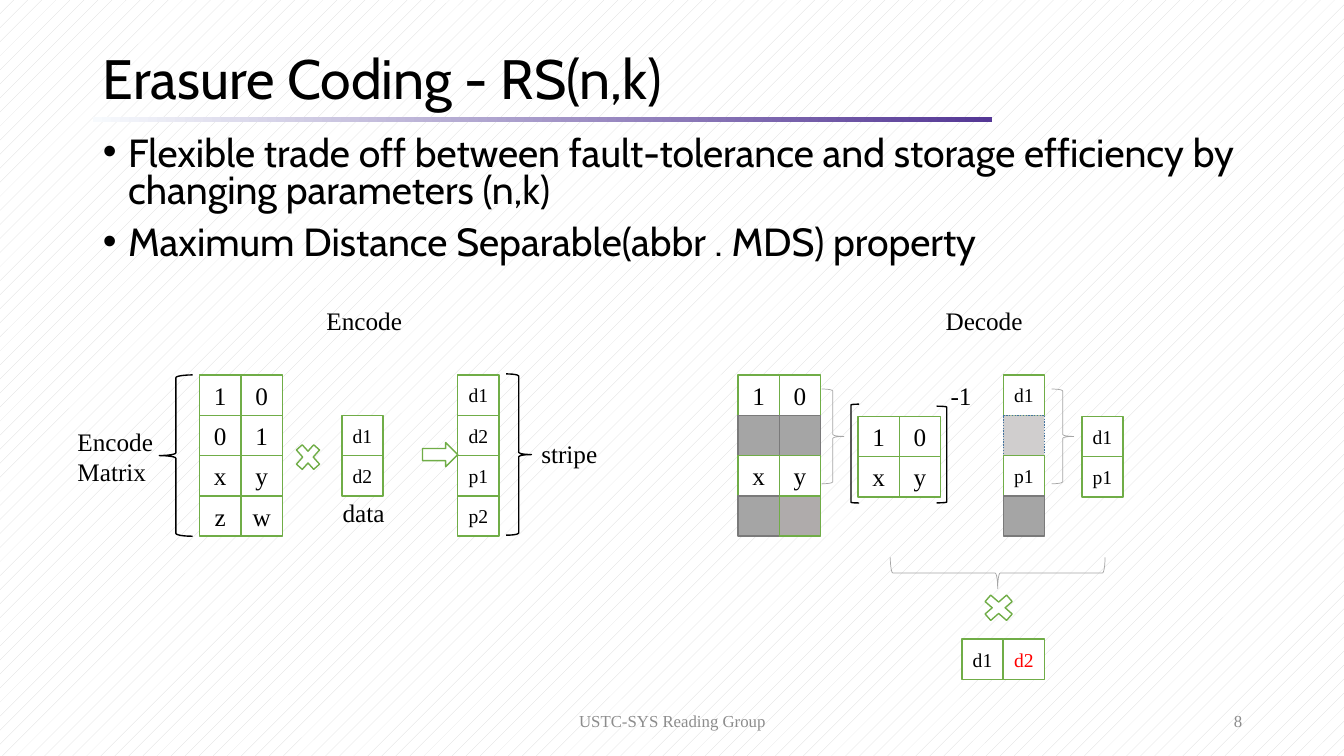
from pptx import Presentation
from pptx.dml.color import RGBColor
from pptx.enum.dml import MSO_LINE, MSO_PATTERN
from pptx.enum.shapes import MSO_SHAPE
from pptx.enum.text import MSO_ANCHOR, MSO_AUTO_SIZE, PP_ALIGN
from pptx.util import Inches, Pt

BLACK = RGBColor(0x00, 0x00, 0x00)
WHITE = RGBColor(0xFF, 0xFF, 0xFF)
RED = RGBColor(0xFF, 0x00, 0x00)
GREEN = RGBColor(0x70, 0xAD, 0x47)
BLUE = RGBColor(0x43, 0x73, 0x9E)
LOST_FILL = RGBColor(0xA5, 0xA5, 0xA5)
LOST_LINE = RGBColor(0x7A, 0x7A, 0x7A)
WARM_GRAY = RGBColor(0xAF, 0xAB, 0xAB)
PALE_GRAY = RGBColor(0xD0, 0xCE, 0xCE)
BRACE_GRAY = RGBColor(0xA6, 0xA6, 0xA6)
FOOTER_GRAY = RGBColor(0x8C, 0x8C, 0x8C)
STRIPE_GRAY = RGBColor(0xD9, 0xD9, 0xD9)
RULE_LIGHT = RGBColor(0xF7, 0xFA, 0xFD)
RULE_DARK = RGBColor(0x54, 0x37, 0x95)

HEADING_FONT = "Cabin"
DIAGRAM_FONT = "Times New Roman"
CELL_WIDTH, CELL_HEIGHT = 0.41, 0.4


def add_outline(kind, left, top, width, height, line=GREEN, weight=1, fill=None):
    shape = page.shapes.add_shape(
        kind, Inches(left), Inches(top), Inches(width), Inches(height))
    shape.shadow.inherit = False
    if fill is None:
        shape.fill.background()
    else:
        shape.fill.solid()
        shape.fill.fore_color.rgb = fill
    shape.line.color.rgb = line
    shape.line.width = Pt(weight)
    return shape


def add_label(text, left, top, width, height, size=18, color=BLACK,
              align=PP_ALIGN.LEFT, anchor=MSO_ANCHOR.TOP):
    box = page.shapes.add_textbox(
        Inches(left), Inches(top), Inches(width), Inches(height))
    frame = box.text_frame
    frame.word_wrap = True
    frame.vertical_anchor = anchor
    frame.text = text
    paragraph = frame.paragraphs[0]
    paragraph.alignment = align
    paragraph.font.name = DIAGRAM_FONT
    paragraph.font.size = Pt(size)
    paragraph.font.color.rgb = color


deck = Presentation()
deck.slide_width, deck.slide_height = Inches(13.33), Inches(7.5)
page = deck.slides.add_slide(deck.slide_layouts[1])

background = page.background.fill
background.patterned()
background.pattern = MSO_PATTERN.PERCENT_5
background.fore_color.rgb = STRIPE_GRAY
background.back_color.rgb = WHITE

# Title, rule and bullets
rule = add_outline(MSO_SHAPE.RECTANGLE, 0.92, 1.16, 8.92, 0.05)
rule.line.fill.background()
rule.fill.gradient()
rule.fill.gradient_angle = 0
for stop, color in zip(rule.fill.gradient_stops, (RULE_LIGHT, RULE_DARK)):
    stop.color.rgb = color

title, body = page.placeholders
title.text_frame.text = "Erasure Coding - RS(n,k)"
body.text_frame.text = (
    "Flexible trade off between fault-tolerance and storage efficiency "
    "by changing parameters (n,k)\n"
    "Maximum Distance Separable(abbr . MDS) property")
for holder, top, height, size, spacing, anchor in (
        (title, 0.43, 0.75, 39.6, 0.9, MSO_ANCHOR.MIDDLE),
        (body, 1.31, 5.43, 28, 0.8, MSO_ANCHOR.TOP)):
    holder.left, holder.top = Inches(0.92), Inches(top)
    holder.width, holder.height = Inches(11.5), Inches(height)
    holder.text_frame.auto_size = MSO_AUTO_SIZE.NONE
    holder.text_frame.vertical_anchor = anchor
    for number, paragraph in enumerate(holder.text_frame.paragraphs):
        paragraph.alignment = PP_ALIGN.LEFT
        paragraph.line_spacing = spacing
        paragraph.space_before = Pt(10 if number else 0)
        paragraph.font.name = HEADING_FONT
        paragraph.font.size = Pt(size)
        paragraph.font.color.rgb = BLACK
for paragraph in body.text_frame.paragraphs:
    properties = paragraph._p.get_or_add_pPr()
    properties.set("marL", str(Inches(0.25)))
    properties.set("indent", str(Inches(-0.25)))

# Matrices and vectors: left, top and rows; an empty entry is a lost block
grids = {
    "encode matrix": (1.98, 3.72, ["1 0", "0 1", "x y", "z w"]),
    "data": (3.39, 4.12, ["d1", "d2"]),
    "stripe": (4.54, 3.72, ["d1", "d2", "p1", "p2"]),
    "damaged matrix": (7.32, 3.72, ["1 0", " ", "x y", " "]),
    "damaged stripe": (9.95, 3.72, ["d1", "", "p1", ""]),
    "inverse": (8.51, 4.13, ["1 0", "x y"]),
    "survivors": (10.73, 4.13, ["d1", "p1"]),
    "recovered": (9.54, 6.34, ["d1 d2"]),
}
cells = {}
for name, (left, top, rows) in grids.items():
    for row, entries in enumerate(rows):
        for column, entry in enumerate(entries.split(" ")):
            cell = add_outline(
                MSO_SHAPE.RECTANGLE,
                left + column * CELL_WIDTH, top + row * CELL_HEIGHT,
                CELL_WIDTH, CELL_HEIGHT,
                line=GREEN if entry else LOST_LINE,
                fill=WHITE if entry else LOST_FILL)
            cells[name, row, column] = cell
            if entry:
                frame = cell.text_frame
                frame.margin_left = frame.margin_right = 0
                frame.vertical_anchor = MSO_ANCHOR.MIDDLE
                frame.text = entry
                paragraph = frame.paragraphs[0]
                paragraph.alignment = PP_ALIGN.CENTER
                paragraph.font.name = DIAGRAM_FONT
                paragraph.font.size = Pt(18 if len(entry) == 1 else 14)
                paragraph.font.color.rgb = BLACK

lost_weight = cells["damaged matrix", 3, 1]
lost_weight.fill.fore_color.rgb = WARM_GRAY
lost_weight.line.color.rgb = GREEN
lost_data = cells["damaged stripe", 1, 0]
lost_data.fill.fore_color.rgb = PALE_GRAY
lost_data.line.color.rgb = BLUE
lost_data.line.dash_style = MSO_LINE.ROUND_DOT
restored_data = cells["recovered", 0, 1]
restored_data.text_frame.paragraphs[0].font.color.rgb = RED

# Operators, braces and brackets
for kind, left, top, width, height in (
        (MSO_SHAPE.MATH_MULTIPLY, 2.89, 4.35, 0.33, 0.37),
        (MSO_SHAPE.RIGHT_ARROW, 4.19, 4.39, 0.35, 0.24),
        (MSO_SHAPE.MATH_MULTIPLY, 9.7, 5.85, 0.41, 0.36)):
    add_outline(kind, left, top, width, height, fill=WHITE)

for kind, left, top, width, height in (
        (MSO_SHAPE.LEFT_BRACE, 1.58, 3.72, 0.33, 1.6),
        (MSO_SHAPE.RIGHT_BRACE, 5.02, 3.71, 0.25, 1.6),
        (MSO_SHAPE.LEFT_BRACKET, 8.44, 4.01, 0.08, 0.98),
        (MSO_SHAPE.RIGHT_BRACKET, 9.29, 4.03, 0.1, 0.96)):
    add_outline(kind, left, top, width, height, line=BLACK)

for left, top, width, height, rotation in (
        (8.15, 3.86, 0.22, 0.94, 0),
        (10.43, 3.86, 0.22, 0.94, 0),
        (9.74, 4.62, 0.31, 2.13, 90)):
    brace = add_outline(MSO_SHAPE.RIGHT_BRACE, left, top, width, height,
                        line=BRACE_GRAY, weight=0.5)
    brace.rotation = rotation

# Labels and footer
for text, left, top, width, height in (
        ("Encode", 3.14, 2.98, 1.96, 0.4),
        ("Decode", 9.28, 2.98, 1.52, 0.4),
        ("Encode Matrix", 0.67, 4.18, 1.31, 0.71),
        ("data", 3.3, 4.88, 1.31, 0.4),
        ("stripe", 5.27, 4.3, 1.31, 0.4),
        ("-1", 9.33, 3.72, 0.88, 0.4)):
    add_label(text, left, top, width, height)

for text, left, width, align in (
        ("USTC-SYS Reading Group", 4.42, 4.5, PP_ALIGN.CENTER),
        ("8", 9.42, 3, PP_ALIGN.RIGHT)):
    add_label(text, left, 6.95, width, 0.4, size=12, color=FOOTER_GRAY,
              align=align, anchor=MSO_ANCHOR.MIDDLE)

deck.save("out.pptx")
